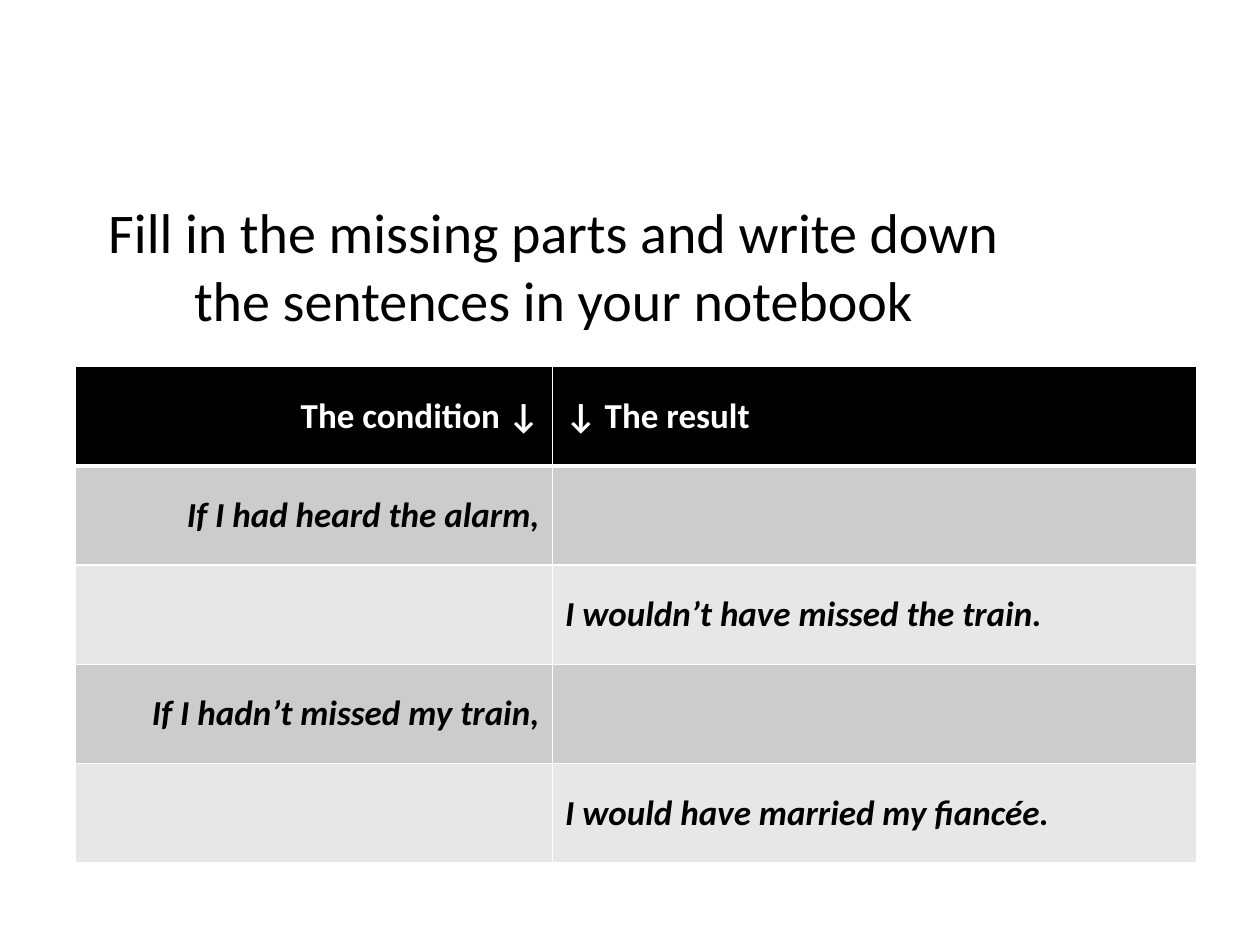
from dataclasses import dataclass

from pptx import Presentation
from pptx.dml.color import RGBColor
from pptx.enum import text
from pptx.oxml import parse_xml
from pptx.oxml.ns import nsdecls
from pptx.util import Pt


@dataclass(frozen=True)
class Theme:
    font: str = "Calibri"
    title_size: int = 32
    table_size: int = 20
    black: str = "000000"
    white: str = "FFFFFF"
    dark_band: str = "CCCCCC"
    light_band: str = "E7E7E7"


theme = Theme()


def style_paragraph(para, size, color, align):
    para.alignment = align
    para.font.name = theme.font
    para.font.size = Pt(size)
    para.font.color.rgb = RGBColor.from_string(color)


def add_border(cell, side, width):
    cell._tc.get_or_add_tcPr().append(parse_xml(
        f'<a:ln{side} {nsdecls("a")} w="{Pt(width)}"><a:solidFill>'
        f'<a:srgbClr val="{theme.white}"/></a:solidFill></a:ln{side}>'))


deck = Presentation()
deck.slide_width, deck.slide_height = Pt(720), Pt(540)
page = deck.slides.add_slide(deck.slide_layouts[5])

title = page.shapes.title
title.left, title.top, title.width, title.height = Pt(31.7), Pt(106.5), Pt(569.5), Pt(90)
title.text_frame.text = "Fill in the missing parts and write down the sentences in your notebook"
title.text_frame.vertical_anchor = text.MSO_ANCHOR.MIDDLE
title.text_frame.auto_size = text.MSO_AUTO_SIZE.NONE
style_paragraph(title.text_frame.paragraphs[0], theme.title_size, theme.black, text.PP_ALIGN.CENTER)

sentences = [
    ("The condition ↓", "↓ The result"),
    ("If I had heard the alarm,", ""),
    ("", "I wouldn’t have missed the train."),
    ("If I hadn’t missed my train,", ""),
    ("", "I would have married my fiancée."),
]
column_widths = [272.9, 368]
column_aligns = [text.PP_ALIGN.RIGHT, text.PP_ALIGN.LEFT]
row_height = 56.7

table = page.shapes.add_table(
    len(sentences), len(column_widths), Pt(42.8), Pt(209.5),
    Pt(sum(column_widths)), Pt(row_height * len(sentences))).table
for column, width in zip(table.columns, column_widths):
    column.width = Pt(width)

for row_index, row_texts in enumerate(sentences):
    table.rows[row_index].height = Pt(row_height)
    is_header = row_index == 0
    band = theme.dark_band if row_index % 2 else theme.light_band
    for column_index, wording in enumerate(row_texts):
        cell = table.cell(row_index, column_index)
        for side in "LRTB":
            add_border(cell, side, 3 if is_header and side == "B" else 1)
        cell.fill.solid()
        cell.fill.fore_color.rgb = RGBColor.from_string(theme.black if is_header else band)
        cell.vertical_anchor = text.MSO_ANCHOR.MIDDLE
        cell.text = wording
        para = cell.text_frame.paragraphs[0]
        style_paragraph(para, theme.table_size, theme.white if is_header else theme.black,
                        column_aligns[column_index])
        para.font.bold = True
        para.font.italic = not is_header

deck.save("out.pptx")
